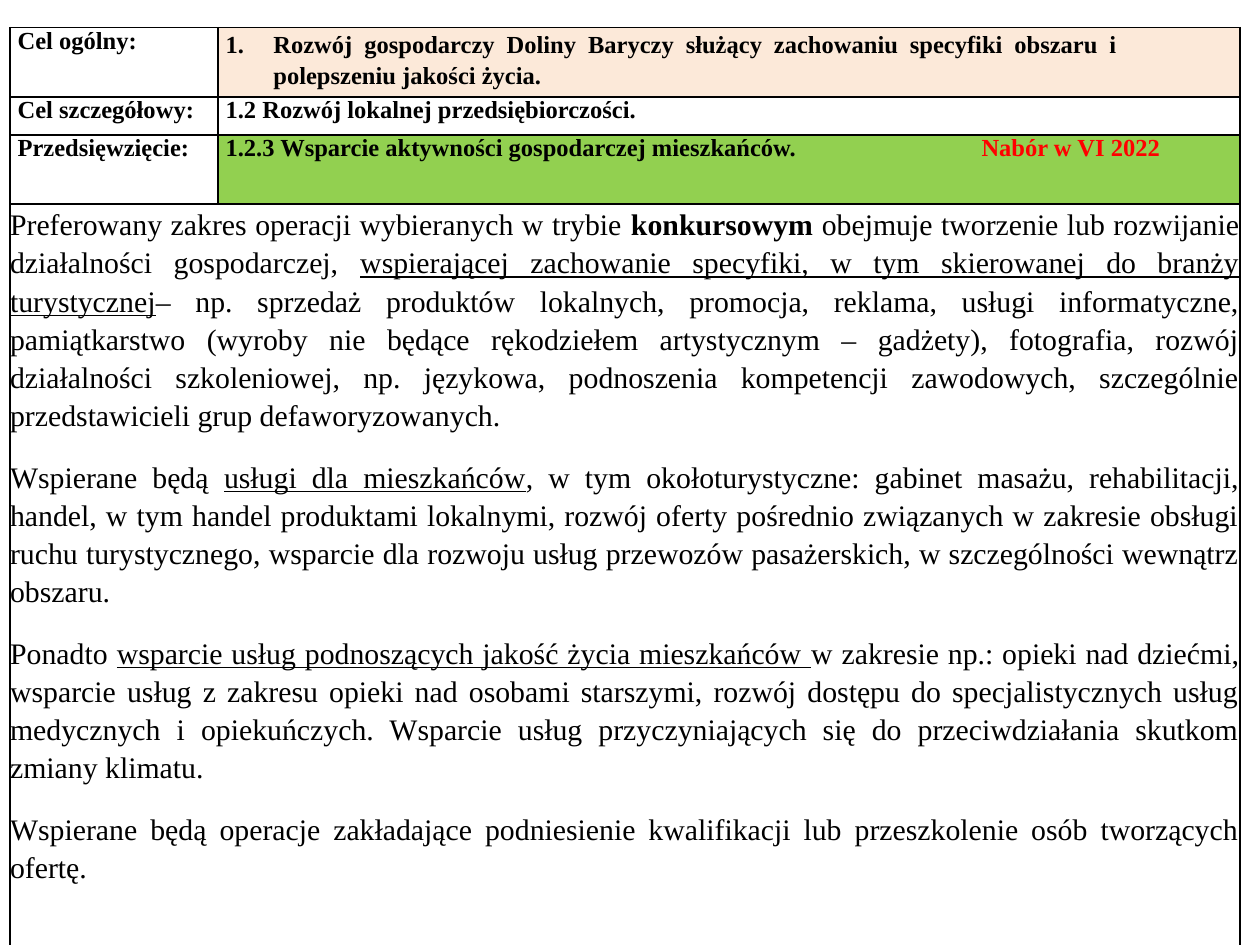
"""Build the slide with the goals table for project 1.2.3."""
from lxml.etree import SubElement
from pptx import Presentation
from pptx.dml.color import RGBColor
from pptx.enum.text import PP_ALIGN
from pptx.oxml.ns import qn
from pptx.util import Inches, Pt


def paint(fill, color):
    fill.solid()
    fill.fore_color.rgb = RGBColor.from_string(color)


def write(para, text, size, color="000000", **style):
    run = para.add_run()
    run.text = text
    look = {"name": "Times New Roman", "size": Pt(size), **style}
    for key, value in look.items():
        setattr(run.font, key, value)
    paint(run.font.fill, color)


deck = Presentation()
deck.slide_width, deck.slide_height = Inches(10), Inches(7.5)
slide = deck.slides.add_slide(deck.slide_layouts[6])

widths = [1.65, 8.11]
heights = [0.55, 0.3, 0.55, 5.93]
frame = slide.shapes.add_table(4, 2, Inches(0.08), Inches(0.22),
                               Inches(sum(widths)), Inches(sum(heights)))
table = frame.table
table.first_row = table.horz_banding = False
for col, width in zip(table.columns, widths):
    col.width = Inches(width)
for row, height in zip(table.rows, heights):
    row.height = Inches(height)

for cell in table.iter_cells():
    margins = {"margin_left": 0.06, "margin_right": 0, "margin_top": 0, "margin_bottom": 0}
    for key, value in margins.items():
        setattr(cell, key, Inches(value))
    props = cell._tc.get_or_add_tcPr()
    for side in ("lnL", "lnR", "lnT", "lnB"):
        line = SubElement(props, qn(f"a:{side}"), w=str(Pt(1)))
        ink = SubElement(line, qn("a:solidFill"))
        SubElement(ink, qn("a:srgbClr"), val="000000")
    cell.fill.background()

heads = [
    ("Cel ogólny:", "1.\tRozwój gospodarczy Doliny Baryczy służący zachowaniu "
     "specyfiki obszaru i polepszeniu jakości życia.", "FCE9D9"),
    ("Cel szczegółowy:", "1.2 Rozwój lokalnej przedsiębiorczości.", None),
    ("Przedsięwzięcie:", "1.2.3 Wsparcie aktywności gospodarczej mieszkańców.", "92D050"),
]
for index, (label, text, shade) in enumerate(heads):
    for cell, words in zip(table.rows[index].cells, (label, text)):
        write(cell.text_frame.paragraphs[0], words, 14, bold=True)
    if shade:
        paint(table.cell(index, 1).fill, shade)

goal = table.cell(0, 1)
goal.margin_right = Inches(0.97)
para = goal.text_frame.paragraphs[0]
para.alignment = PP_ALIGN.JUSTIFY
para.line_spacing = 1.15
props = para._p.get_or_add_pPr()
props.set("marL", str(Inches(0.38)))
props.set("indent", str(-Inches(0.38)))

para = table.cell(2, 1).text_frame.paragraphs[0]
tabs = SubElement(para._p.get_or_add_pPr(), qn("a:tabLst"))
SubElement(tabs, qn("a:tab"), pos=str(Inches(6)), algn="l")
write(para, "\tNabór w VI 2022", 14, "FF0000", bold=True)

plain, bold, under = {}, {"bold": True}, {"underline": True}
scope = [
    [("Preferowany zakres operacji wybieranych w trybie ", plain),
     ("konkursowym", bold),
     (" obejmuje tworzenie lub rozwijanie działalności gospodarczej, ", plain),
     ("wspierającej zachowanie specyfiki, w tym skierowanej do branży turystycznej", under),
     ("– np. sprzedaż produktów lokalnych, promocja, reklama, usługi informatyczne, "
      "pamiątkarstwo (wyroby nie będące rękodziełem artystycznym – gadżety), fotografia, "
      "rozwój działalności szkoleniowej, np. językowa, podnoszenia kompetencji zawodowych, "
      "szczególnie przedstawicieli grup defaworyzowanych.", plain)],
    [("Wspierane będą ", plain),
     ("usługi dla mieszkańców", under),
     (", w tym okołoturystyczne: gabinet masażu, rehabilitacji, handel, w tym handel "
      "produktami lokalnymi, rozwój oferty pośrednio związanych w zakresie obsługi ruchu "
      "turystycznego, wsparcie dla rozwoju usług przewozów pasażerskich, w szczególności "
      "wewnątrz obszaru.", plain)],
    [("Ponadto ", plain),
     ("wsparcie usług podnoszących jakość życia mieszkańców ", under),
     ("w zakresie np.: opieki nad dziećmi, wsparcie usług z zakresu opieki nad osobami "
      "starszymi, rozwój dostępu do specjalistycznych usług medycznych i opiekuńczych. "
      "Wsparcie usług przyczyniających się do przeciwdziałania skutkom zmiany klimatu.", plain)],
    [("Wspierane będą operacje zakładające podniesienie kwalifikacji lub przeszkolenie "
      "osób tworzących ofertę.", plain)],
]
body = table.cell(3, 0)
body.merge(table.cell(3, 1))
body.margin_left = 0
layout = {"alignment": PP_ALIGN.JUSTIFY, "line_spacing": 1.15,
          "space_before": Pt(3.4), "space_after": Pt(10)}
for index, parts in enumerate(scope):
    text = body.text_frame
    para = text.add_paragraph() if index else text.paragraphs[0]
    for key, value in layout.items():
        setattr(para, key, value)
    for words, style in parts:
        write(para, words, 17, **{"bold": False, **style})

deck.save("out.pptx")
